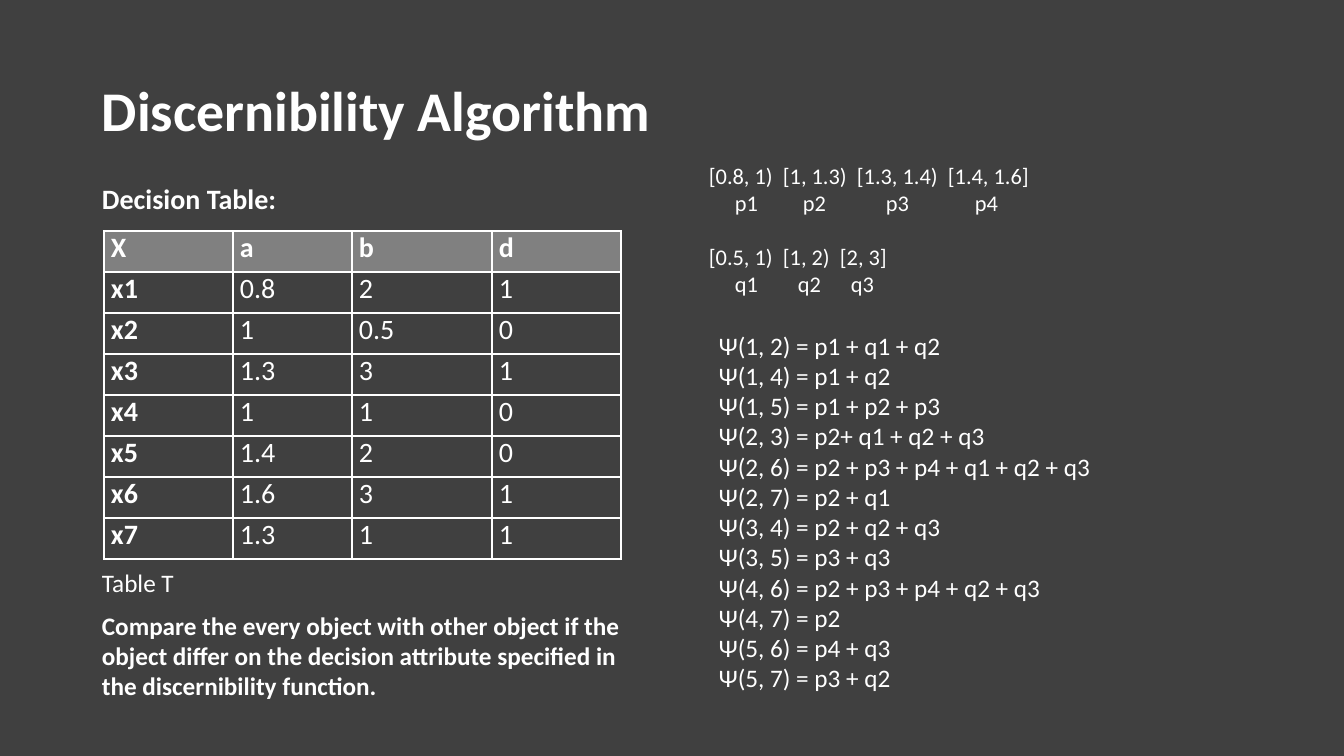
from lxml.etree import SubElement
from pptx import Presentation
from pptx.dml.color import RGBColor
from pptx.enum.text import MSO_ANCHOR
from pptx.oxml.ns import qn
from pptx.util import Pt

EMU_PER_PX = 914400 / 100.8
FONT = "Calibri"
COLORS = {"background": "404040", "text": "FFFFFF", "header": "808080"}

DECISIONS = [
    ("X", "a", "b", "d"),
    ("x1", "0.8", "2", "1"),
    ("x2", "1", "0.5", "0"),
    ("x3", "1.3", "3", "1"),
    ("x4", "1", "1", "0"),
    ("x5", "1.4", "2", "0"),
    ("x6", "1.6", "3", "1"),
    ("x7", "1.3", "1", "1"),
]
INTERVAL_ROWS = [
    (["[0.8, 1)", "[1, 1.3)", "[1.3, 1.4)", "[1.4, 1.6]"], [74, 148, 239], 0),
    (["", "p1", "p2", "p3", "p4"], [26, 94, 177, 266], 0),
    (["[0.5, 1)", "[1, 2)", "[2, 3]"], [74, 131], 19.5),
    (["", "q1", "q2", "q3"], [26, 89, 142], 0),
]
DISCERNIBILITY = [
    "Ψ(1, 2) = p1 + q1 + q2",
    "Ψ(1, 4) = p1 + q2",
    "Ψ(1, 5) = p1 + p2 + p3",
    "Ψ(2, 3) = p2+ q1 + q2 + q3",
    "Ψ(2, 6) = p2 + p3 + p4 + q1 + q2 + q3",
    "Ψ(2, 7) = p2 + q1",
    "Ψ(3, 4) = p2 + q2 + q3",
    "Ψ(3, 5) = p3 + q3",
    "Ψ(4, 6) = p2 + p3 + p4 + q2 + q3",
    "Ψ(4, 7) = p2",
    "Ψ(5, 6) = p4 + q3",
    "Ψ(5, 7) = p3 + q2",
]


def px(length):
    """Turn pixels into EMU."""
    return round(length * EMU_PER_PX)


def color(name):
    """Look up a named colour."""
    return RGBColor.from_string(COLORS[name])


def style(paragraph, size, bold=False):
    """Set the font of a whole paragraph."""
    font = paragraph.font
    font.name, font.size, font.bold = FONT, Pt(size), bold
    font.color.rgb = color("text")


def add_text(slide, box, lines, size, bold=False):
    """Place a wrapped text box with one paragraph per line."""
    frame = slide.shapes.add_textbox(*map(px, box)).text_frame
    frame.word_wrap = True
    frame.text = "\n".join(lines)
    for paragraph in frame.paragraphs:
        style(paragraph, size, bold)
    return frame


def add_title(slide, box):
    """Place the slide title, centred vertically in its box."""
    frame = add_text(slide, box, ["Discernibility Algorithm"], 40, True)
    frame.vertical_anchor = MSO_ANCHOR.MIDDLE
    frame.paragraphs[0].line_spacing = 0.9


def add_borders(cell):
    """Draw a thin line on all four sides of a cell."""
    properties = cell._tc.get_or_add_tcPr()
    for side in ("a:lnL", "a:lnR", "a:lnT", "a:lnB"):
        line = SubElement(properties, qn(side), w=str(Pt(1)))
        fill = SubElement(line, qn("a:solidFill"))
        SubElement(fill, qn("a:srgbClr"), val=COLORS["text"])


def add_decision_grid(slide, box):
    """Fill the box with the decision table."""
    widths = [129, 119, 140, 129]
    table = slide.shapes.add_table(len(DECISIONS), len(widths), *map(px, box)).table
    table.first_row = table.horz_banding = False
    for column, width in zip(table.columns, widths):
        column.width = px(width)
    for r, values in enumerate(DECISIONS):
        table.rows[r].height = px(box[3] / len(DECISIONS))
        for c, value in enumerate(values):
            cell = table.cell(r, c)
            cell.text = value
            cell.margin_left = cell.margin_right = px(7)
            cell.margin_top = cell.margin_bottom = 0
            style(cell.text_frame.paragraphs[0], 20, r == 0 or c == 0)
            add_borders(cell)
            if r == 0:
                cell.fill.solid()
                cell.fill.fore_color.rgb = color("header")
            else:
                cell.fill.background()


def add_decision_panel(slide, box):
    """Place the heading, table, caption and explanation."""
    left, top, width, height = box
    add_text(slide, (left, top, 367, 44), ["Decision Table:"], 20, True)
    add_decision_grid(slide, (left + 12, top + 54, 517, 328))
    add_text(slide, (left, top + 385, width, 40), ["Table T"], 18)
    explanation = (
        "Compare the every object with other object if the object differ on "
        "the decision attribute specified in the discernibility function."
    )
    add_text(slide, (left, top + height - 102, width, 102), [explanation], 18, True)


def add_intervals(slide, box):
    """Place the intervals with their labels on tab stops."""
    lines = ["\t".join(parts) for parts, _, _ in INTERVAL_ROWS]
    frame = add_text(slide, box, lines, 16)
    for paragraph, (_, stops, gap) in zip(frame.paragraphs, INTERVAL_ROWS):
        paragraph.space_before = Pt(gap)
        properties = paragraph._p.get_or_add_pPr()
        tabs = SubElement(properties, qn("a:tabLst"))
        for stop in stops:
            SubElement(tabs, qn("a:tab"), pos=str(px(stop)), algn="l")
        properties.append(properties.find(qn("a:defRPr")))


def add_functions(slide, box):
    """Place the indented list of discernibility functions."""
    frame = add_text(slide, box, DISCERNIBILITY, 18)
    for paragraph in frame.paragraphs:
        paragraph._p.get_or_add_pPr().set("marL", str(px(50)))


def main():
    """Build and save the slide."""
    deck = Presentation()
    deck.slide_width, deck.slide_height = px(1344), px(756)
    slide = deck.slides.add_slide(deck.slide_layouts[6])
    slide.background.fill.solid()
    slide.background.fill.fore_color.rgb = color("background")
    add_title(slide, (92, 40, 1159, 146))
    add_decision_panel(slide, (92, 177, 555, 530))
    add_intervals(slide, (699, 157, 571, 146))
    add_functions(slide, (659, 325, 517, 377))
    deck.save("out.pptx")


if __name__ == "__main__":
    main()
